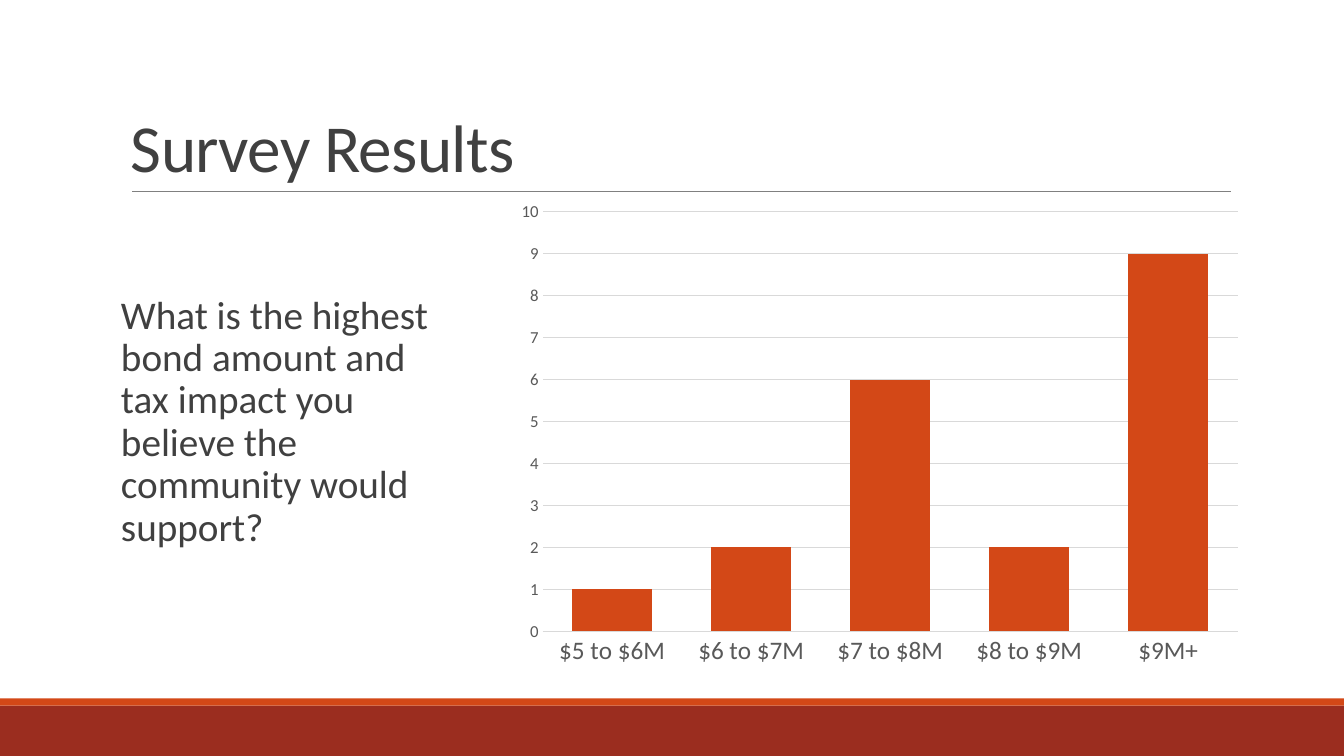
from dataclasses import dataclass

from lxml.etree import SubElement
from pptx import Presentation
from pptx.chart.data import CategoryChartData
from pptx.dml.color import RGBColor
from pptx.enum.chart import XL_CHART_TYPE, XL_TICK_MARK
from pptx.enum.shapes import MSO_CONNECTOR, MSO_SHAPE
from pptx.enum.text import MSO_ANCHOR
from pptx.oxml import parse_xml
from pptx.oxml.ns import nsdecls, qn
from pptx.util import Cm, Pt

FONT = "Calibri"
DARK, GREY, PALE, RULE = "404040", "595959", "D9D9D9", "808080"
ORANGE, BRICK = "D34817", "9B2D1F"
PAGE_WIDTH, PAGE_HEIGHT = 33.87, 19.05


@dataclass
class Band:
    top: float
    height: float
    fill: str


@dataclass
class TextBlock:
    left: float
    top: float
    width: float
    height: float
    text: str
    size: float
    line_spacing: float
    side_inset: float
    anchor: MSO_ANCHOR
    tracking: int = 0


BANDS = [Band(17.78, 1.27, BRICK), Band(17.6, 0.18, ORANGE)]
TEXT_BLOCKS = [
    TextBlock(3.05, 0.79, 27.94, 4.04, "Survey Results",
              48, 0.85, 0.25, MSO_ANCHOR.BOTTOM, -50),
    TextBlock(3.05, 7.32, 8.51, 7.54,
              "What is the highest bond amount and tax impact you believe "
              "the community would support?",
              28, 0.9, 0, MSO_ANCHOR.TOP),
]
ANSWERS = {"$5 to $6M": 1, "$6 to $7M": 2, "$7 to $8M": 6, "$8 to $9M": 2, "$9M+": 9}
PLOT_AREA = {"x": 0.191, "y": 0.115, "w": 0.792, "h": 0.781}


def color(value: str) -> RGBColor:
    return RGBColor.from_string(value)


def style_font(font, size: float, shade: str) -> None:
    font.name = FONT
    font.size = Pt(size)
    font.color.rgb = color(shade)


def style_line(line, width: float, shade: str) -> None:
    line.width = Pt(width)
    line.color.rgb = color(shade)


def add_band(page, band: Band) -> None:
    shape = page.shapes.add_shape(MSO_SHAPE.RECTANGLE, Cm(0), Cm(band.top),
                                  Cm(PAGE_WIDTH), Cm(band.height))
    shape.shadow.inherit = False
    shape.fill.solid()
    shape.fill.fore_color.rgb = color(band.fill)
    shape.line.fill.background()


def add_rule(page) -> None:
    rule = page.shapes.add_connector(MSO_CONNECTOR.STRAIGHT,
                                     Cm(3.33), Cm(4.83), Cm(31.01), Cm(4.83))
    style_line(rule.line, 0.5, RULE)
    SubElement(rule.element.spPr, qn("a:effectLst"))


def add_text(page, block: TextBlock) -> None:
    box = page.shapes.add_textbox(Cm(block.left), Cm(block.top),
                                  Cm(block.width), Cm(block.height))
    frame = box.text_frame
    frame.word_wrap = True
    frame.vertical_anchor = block.anchor
    frame.margin_left = frame.margin_right = Cm(block.side_inset)
    para = frame.paragraphs[0]
    para.line_spacing = block.line_spacing
    span = para.add_run()
    span.text = block.text
    style_font(span.font, block.size, DARK)
    if block.tracking:
        span.font._element.set("spc", str(block.tracking))


def place_plot(chart) -> None:
    """Fix the inner plot area as fractions of the chart frame."""
    plot_area = chart.element.find(".//" + qn("c:plotArea"))
    for layout in plot_area.findall(qn("c:layout")):
        plot_area.remove(layout)
    modes = "".join(f'<c:{key}Mode val="edge"/>' for key in "xy")
    sizes = "".join(f'<c:{key} val="{share}"/>' for key, share in PLOT_AREA.items())
    plot_area.insert(0, parse_xml(
        f'<c:layout {nsdecls("c")}><c:manualLayout><c:layoutTarget val="inner"/>'
        f"{modes}{sizes}</c:manualLayout></c:layout>"))


def add_survey_chart(page) -> None:
    survey = CategoryChartData()
    survey.categories = list(ANSWERS)
    survey.add_series("Series 1", list(ANSWERS.values()))
    chart = page.shapes.add_chart(XL_CHART_TYPE.COLUMN_CLUSTERED, Cm(9.45), Cm(3.78),
                                  Cm(22.12), Cm(13.54), survey).chart
    chart.has_title = False
    chart.has_legend = False
    style_font(chart.font, 10, "000000")
    place_plot(chart)

    # Columns
    plot = chart.plots[0]
    plot.vary_by_categories = False
    plot.gap_width = 75
    plot.overlap = -27
    columns = plot.series[0].format
    columns.fill.solid()
    columns.fill.fore_color.rgb = color(ORANGE)

    # Axes
    for axis, size in ((chart.category_axis, 18), (chart.value_axis, 12)):
        axis.major_tick_mark = axis.minor_tick_mark = XL_TICK_MARK.NONE
        style_font(axis.tick_labels.font, size, GREY)
    style_line(chart.category_axis.format.line, 0.75, PALE)
    values = chart.value_axis
    values.minimum_scale, values.maximum_scale, values.major_unit = 0, 10, 1
    values.format.line.fill.background()
    values.has_major_gridlines = True
    style_line(values.major_gridlines.format.line, 0.75, PALE)


def main() -> None:
    deck = Presentation()
    deck.slide_width, deck.slide_height = Cm(PAGE_WIDTH), Cm(PAGE_HEIGHT)
    page = deck.slides.add_slide(deck.slide_layouts[6])

    # Footer bands and title rule
    for band in BANDS:
        add_band(page, band)
    add_rule(page)

    # Chart, title and question
    add_survey_chart(page)
    for block in TEXT_BLOCKS:
        add_text(page, block)

    deck.save("out.pptx")


if __name__ == "__main__":
    main()
